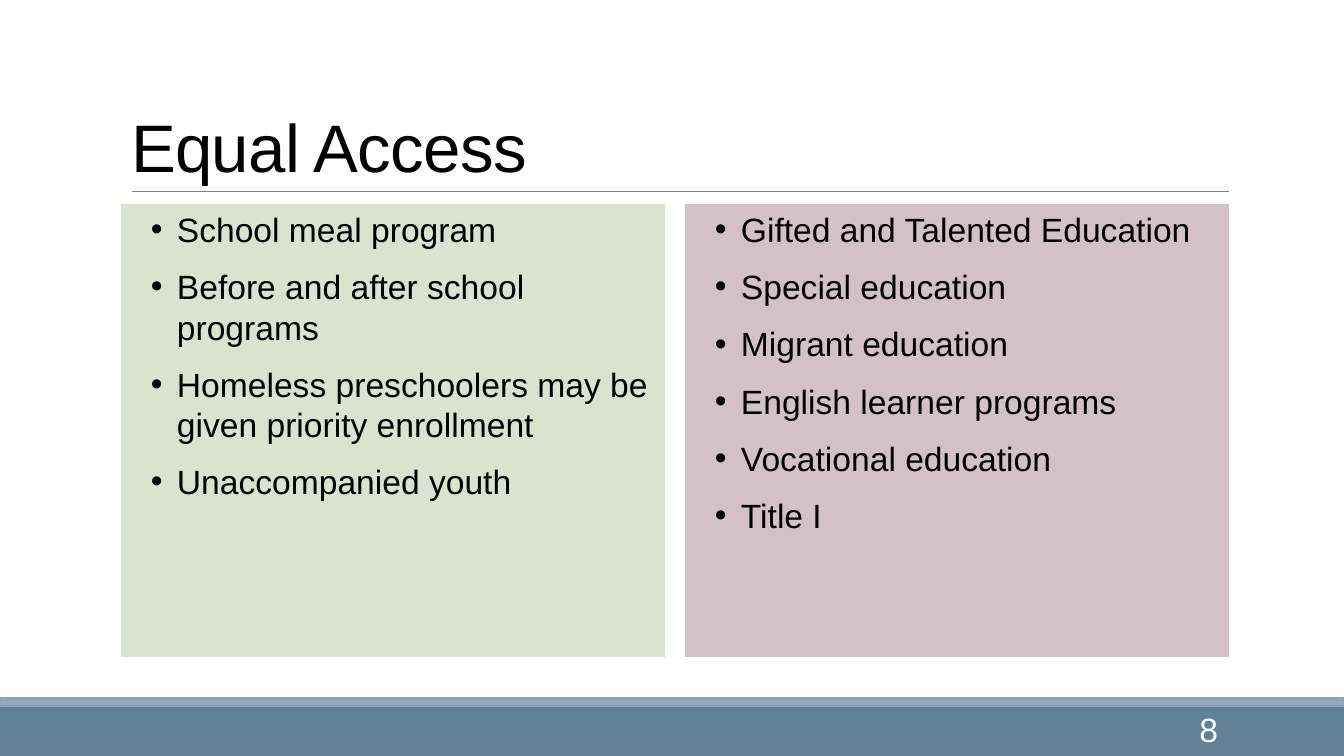
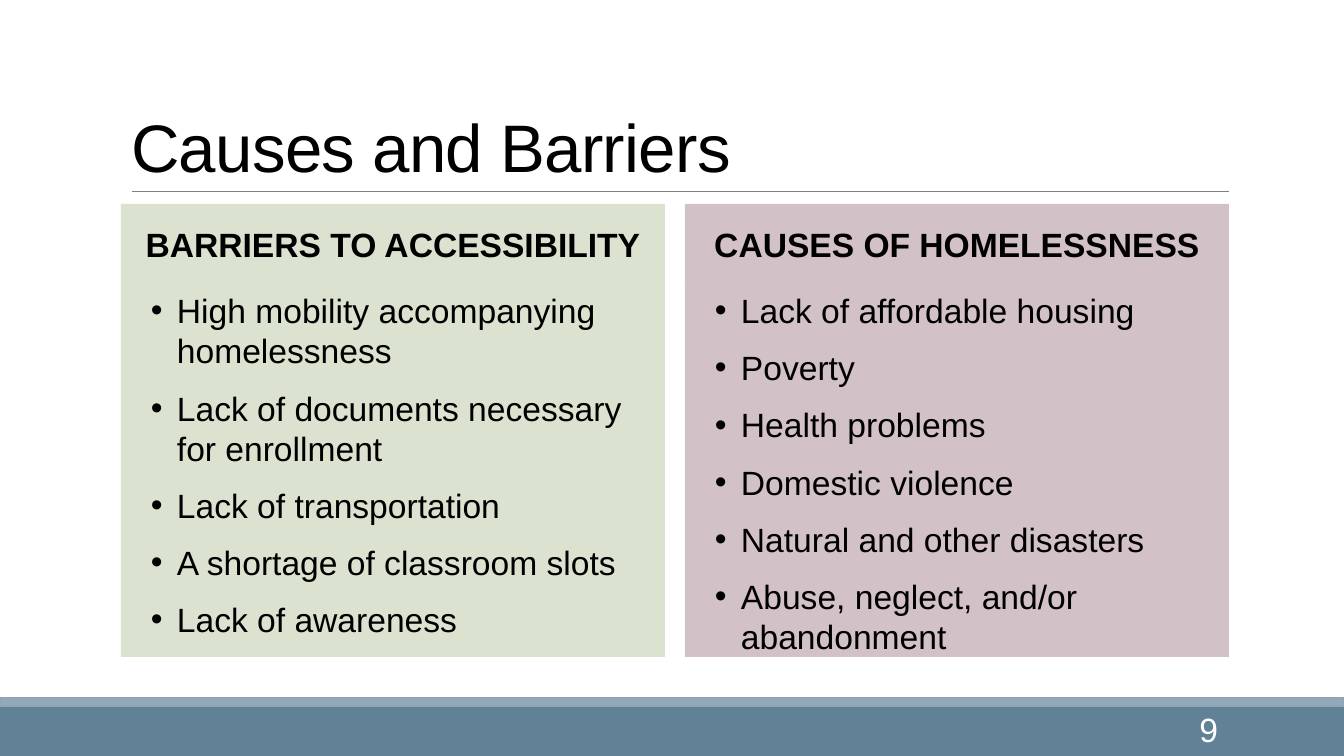
import pptx
import pptx.dml.color
import pptx.enum.shapes
import pptx.enum.text
import pptx.oxml.ns
import pptx.util
from lxml import etree

# Shared style, lengths in px
EMU_PER_INCH = 914400
PX_PER_INCH = 100.8
SLIDE_WIDTH, SLIDE_HEIGHT = 1344, 756
FONT = "Arial"
COLORS = {
    "text": "000000",
    "number": "FFFFFF",
    "band": "618197",
    "stripe": "92A9B9",
    "stripe_edge": "8FA3B6",
    "rule": "808080",
    "green": "DCE2D0",
    "mauve": "D2C2C7",
}

# Two-column grid
LEFT, TOP = 121, 204
COLUMN_WIDTH, COLUMN_GAP = 544, 20
COLUMN_HEIGHT, HEADING_HEIGHT = 453, 81
CONTENT_RIGHT = LEFT + 2 * COLUMN_WIDTH + COLUMN_GAP
COLUMN_FILLS = ("green", "mauve")

# Content: slide number, title, columns of (heading, items)
SLIDES = [
    (8, "Equal Access", [
        (None, [
            "School meal program",
            "Before and after school programs",
            "Homeless preschoolers may be given priority enrollment",
            "Unaccompanied youth",
        ]),
        (None, [
            "Gifted and Talented Education",
            "Special education",
            "Migrant education",
            "English learner programs",
            "Vocational education",
            "Title I",
        ]),
    ]),
    (9, "Causes and Barriers", [
        ("BARRIERS TO ACCESSIBILITY", [
            "High mobility accompanying homelessness",
            "Lack of documents necessary for enrollment",
            "Lack of transportation",
            "A shortage of classroom slots",
            "Lack of awareness",
        ]),
        ("CAUSES OF HOMELESSNESS", [
            "Lack of affordable housing",
            "Poverty",
            "Health problems",
            "Domestic violence",
            "Natural and other disasters",
            "Abuse, neglect, and/or abandonment",
        ]),
    ]),
]


def px(length):
    return pptx.util.Emu(round(length * EMU_PER_INCH / PX_PER_INCH))


def color(name):
    return pptx.dml.color.RGBColor.from_string(COLORS[name])


def format_runs(paragraph, size, color_name="text", bold=False):
    for run in paragraph.runs:
        run.font.name = FONT
        run.font.size = pptx.util.Pt(size)
        run.font.bold = bold
        run.font.color.rgb = color(color_name)


def add_box(slide, left, top, width, height, fill):
    shape = slide.shapes.add_shape(
        pptx.enum.shapes.MSO_SHAPE.RECTANGLE,
        px(left), px(top), px(width), px(height))
    shape.shadow.inherit = False
    shape.fill.solid()
    shape.fill.fore_color.rgb = color(fill)
    shape.line.fill.background()
    return shape


def add_rule(slide, left, right, y):
    line = slide.shapes.add_connector(
        pptx.enum.shapes.MSO_CONNECTOR.STRAIGHT,
        px(left), px(y), px(right), px(y))
    line.line.color.rgb = color("rule")
    line.line.width = pptx.util.Pt(0.5)
    etree.SubElement(line._element.spPr, pptx.oxml.ns.qn("a:effectLst"))


def add_frame(slide, number):
    """Footer bands, title rule and slide number."""
    add_box(slide, 0, 707, SLIDE_WIDTH, SLIDE_HEIGHT - 707, "band")
    stripe = add_box(slide, 0, 698, SLIDE_WIDTH, 8, "stripe")
    stripe.line.color.rgb = color("stripe_edge")
    stripe.line.width = pptx.util.Pt(1.25)
    add_rule(slide, 132, CONTENT_RIGHT, 191)

    box = slide.shapes.add_textbox(px(1083), px(709), px(145), px(40))
    text_frame = box.text_frame
    text_frame.word_wrap = True
    text_frame.vertical_anchor = pptx.enum.text.MSO_ANCHOR.MIDDLE
    text_frame.text = str(number)
    paragraph = text_frame.paragraphs[0]
    paragraph.alignment = pptx.enum.text.PP_ALIGN.RIGHT
    format_runs(paragraph, 24, "number")


def set_title(slide, text):
    title = slide.shapes.title
    title.left, title.top = px(LEFT), px(31)
    title.width, title.height = px(CONTENT_RIGHT - LEFT), px(160)
    text_frame = title.text_frame
    text_frame.text = text
    text_frame.word_wrap = True
    text_frame.auto_size = pptx.enum.text.MSO_AUTO_SIZE.NONE
    text_frame.vertical_anchor = pptx.enum.text.MSO_ANCHOR.BOTTOM
    paragraph = text_frame.paragraphs[0]
    paragraph.alignment = pptx.enum.text.PP_ALIGN.LEFT
    paragraph.line_spacing = 0.85
    format_runs(paragraph, 48)
    for run in paragraph.runs:
        run._r.get_or_add_rPr().set("spc", "-50")


def add_heading(slide, left, text, fill):
    shape = add_box(slide, left, TOP, COLUMN_WIDTH, HEADING_HEIGHT, fill)
    text_frame = shape.text_frame
    text_frame.word_wrap = True
    text_frame.vertical_anchor = pptx.enum.text.MSO_ANCHOR.MIDDLE
    text_frame.text = text
    paragraph = text_frame.paragraphs[0]
    paragraph.alignment = pptx.enum.text.PP_ALIGN.CENTER
    format_runs(paragraph, 24, bold=True)


def set_bullet(paragraph):
    properties = paragraph._p.get_or_add_pPr()
    properties.set("marL", str(px(51)))
    properties.set("indent", str(-px(26)))
    etree.SubElement(properties, pptx.oxml.ns.qn("a:buFont"), typeface=FONT)
    etree.SubElement(properties, pptx.oxml.ns.qn("a:buChar"), char="•")


def add_bullet_list(slide, left, top, height, items, fill):
    shape = add_box(slide, left, top, COLUMN_WIDTH, height, fill)
    text_frame = shape.text_frame
    text_frame.word_wrap = True
    text_frame.vertical_anchor = pptx.enum.text.MSO_ANCHOR.TOP
    text_frame.margin_left = text_frame.margin_right = px(5)
    text_frame.margin_top = text_frame.margin_bottom = px(5)
    text_frame.text = "\n".join(items)
    for index, paragraph in enumerate(text_frame.paragraphs):
        set_bullet(paragraph)
        paragraph.alignment = pptx.enum.text.PP_ALIGN.LEFT
        paragraph.space_before = pptx.util.Pt(6 if index else 0)
        paragraph.space_after = pptx.util.Pt(6)
        format_runs(paragraph, 24)


def add_column(slide, index, heading, items):
    left = LEFT + index * (COLUMN_WIDTH + COLUMN_GAP)
    fill = COLUMN_FILLS[index]
    offset = 0
    if heading:
        add_heading(slide, left, heading, fill)
        offset = HEADING_HEIGHT
    add_bullet_list(slide, left, TOP + offset, COLUMN_HEIGHT - offset, items, fill)


def main():
    presentation = pptx.Presentation()
    presentation.slide_width = px(SLIDE_WIDTH)
    presentation.slide_height = px(SLIDE_HEIGHT)
    title_only = presentation.slide_layouts[5]
    for number, title, columns in SLIDES:
        slide = presentation.slides.add_slide(title_only)
        add_frame(slide, number)
        set_title(slide, title)
        for index, (heading, items) in enumerate(columns):
            add_column(slide, index, heading, items)
    presentation.save("out.pptx")


if __name__ == "__main__":
    main()
